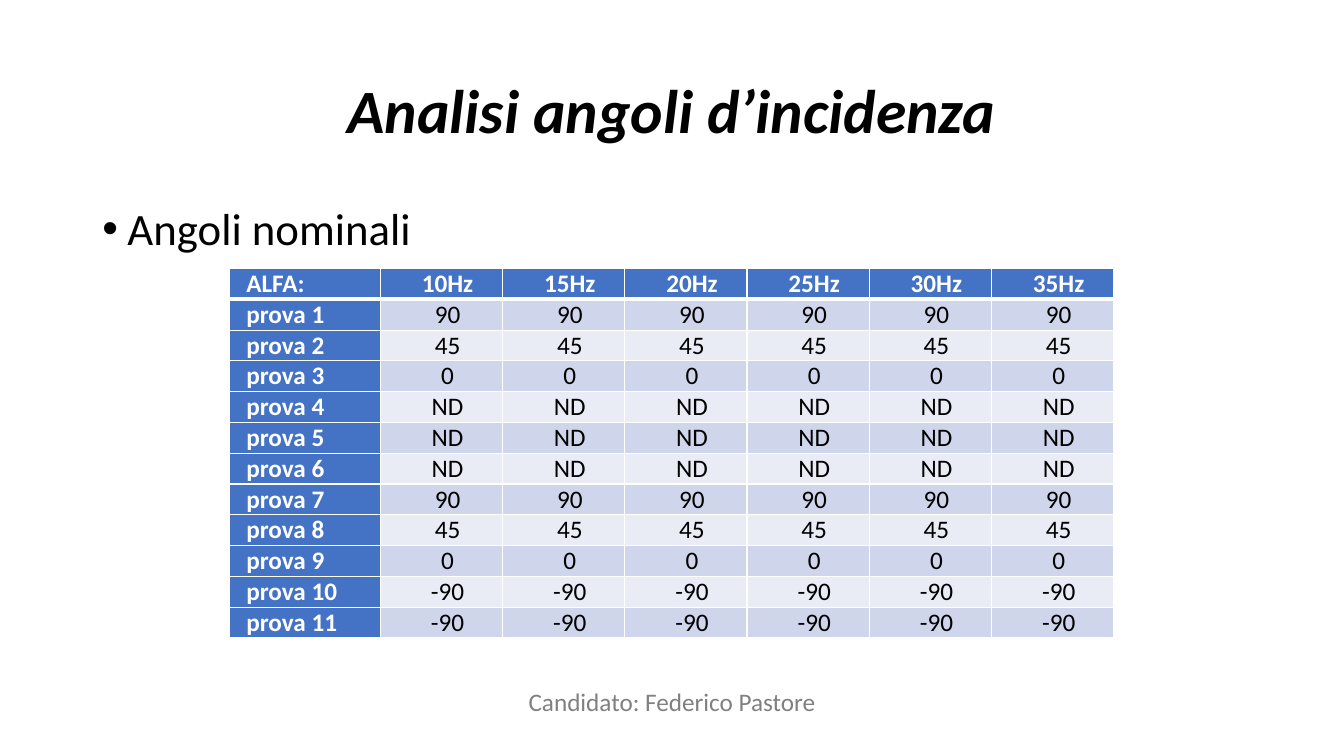
import dataclasses

import lxml.etree
import pptx
import pptx.dml.color
import pptx.enum.text
import pptx.oxml.ns
import pptx.util

Pt = pptx.util.Pt
Align = pptx.enum.text.PP_ALIGN
Anchor = pptx.enum.text.MSO_ANCHOR
qn = pptx.oxml.ns.qn


@dataclasses.dataclass(frozen=True)
class Theme:
    """Colours, font and type sizes of the slide."""
    face: str = "Calibri"
    ink: str = "000000"
    paper: str = "FFFFFF"
    mute: str = "808080"
    head: str = "4472C4"
    bands: tuple = ("CFD5EA", "E9EBF5")
    title: int = 44
    body: int = 32
    small: int = 18


THEME = Theme()
HEADS = ["ALFA:"] + [f"{hertz}Hz" for hertz in range(10, 40, 5)]
ANGLES = ["90", "45", "0", "ND", "ND", "ND", "90", "45", "0", "-90", "-90"]


def style(para, size, color, bold=False, italic=False):
    """Format every run of a paragraph."""
    for run in para.runs:
        font = run.font
        font.name, font.size = THEME.face, Pt(size)
        font.bold, font.italic = bold, italic
        font.color.rgb = pptx.dml.color.RGBColor.from_string(color)


def place(shape, box):
    """Move a shape to a box given in points."""
    shape.left, shape.top, shape.width, shape.height = map(Pt, box)


def add_title(slide, box, text):
    """Fill the title placeholder."""
    title = slide.shapes.title
    place(title, box)
    frame = title.text_frame
    frame.text = text
    frame.vertical_anchor = Anchor.MIDDLE
    para = frame.paragraphs[0]
    para.alignment, para.line_spacing = Align.CENTER, 0.9
    style(para, THEME.title, THEME.ink, bold=True, italic=True)


def add_foot(slide, box, text):
    """Add the centred candidate line."""
    frame = slide.shapes.add_textbox(*map(Pt, box)).text_frame
    frame.text = text
    frame.word_wrap = False
    para = frame.paragraphs[0]
    para.alignment = Align.CENTER
    style(para, THEME.small, THEME.mute)


def add_body(slide, box, text):
    """Add the bulleted body text."""
    frame = slide.shapes.add_textbox(*map(Pt, box)).text_frame
    frame.word_wrap = True
    frame.text = text
    para = frame.paragraphs[0]
    para.line_spacing = 0.9
    props = para._p.get_or_add_pPr()
    props.set("marL", str(Pt(18)))
    props.set("indent", str(Pt(-18)))
    lxml.etree.SubElement(props, qn("a:buFont"), typeface="Arial")
    lxml.etree.SubElement(props, qn("a:buChar"), char="•")
    style(para, THEME.body, THEME.ink)


def add_edges(cell, top, base):
    """Draw the four cell borders, with top and base widths in points."""
    props = cell._tc.get_or_add_tcPr()
    for side, width in (("L", 1), ("R", 1), ("T", top), ("B", base)):
        line = lxml.etree.SubElement(props, qn(f"a:ln{side}"), w=str(Pt(width)))
        fill = lxml.etree.SubElement(line, qn("a:solidFill"))
        lxml.etree.SubElement(fill, qn("a:srgbClr"), val=THEME.paper)


def fill_cell(cell, text, row, col):
    """Write and format one cell by its place in the grid."""
    label = row == 0 or col == 0
    back = THEME.head if label else THEME.bands[(row - 1) % 2]
    add_edges(cell, 3 if row == 1 else 1, 3 if row == 0 else 1)
    cell.fill.solid()
    cell.fill.fore_color.rgb = pptx.dml.color.RGBColor.from_string(back)
    cell.margin_left = cell.margin_right = Pt(3.6)
    cell.margin_top = cell.margin_bottom = Pt(0)
    cell.vertical_anchor = Anchor.BOTTOM
    cell.text_frame.text = text
    para = cell.text_frame.paragraphs[0]
    para.alignment = Align.CENTER if col else Align.LEFT
    para._p.get_or_add_pPr().set("indent", str(Pt(8.64)))
    style(para, THEME.small, THEME.paper if label else THEME.ink, bold=label)


def add_grid(slide, box, first):
    """Add the angle table, its first column of the given width."""
    rows = [HEADS] + [[f"prova {num}"] + [angle] * (len(HEADS) - 1)
                      for num, angle in enumerate(ANGLES, 1)]
    table = slide.shapes.add_table(len(rows), len(HEADS), *map(Pt, box)).table
    rest = (box[2] - first) / (len(HEADS) - 1)
    for col, column in enumerate(table.columns):
        column.width = Pt(rest if col else first)
    for row, texts in enumerate(rows):
        table.rows[row].height = Pt(box[3] / len(rows))
        for col, text in enumerate(texts):
            fill_cell(table.cell(row, col), text, row, col)


def main():
    """Build and save the slide."""
    deck = pptx.Presentation()
    deck.slide_width, deck.slide_height = Pt(960), Pt(540)
    slide = deck.slides.add_slide(deck.slide_layouts[5])
    add_title(slide, (66, 28.8, 828, 104.4), "Analisi angoli d’incidenza")
    add_foot(slide, (367, 486.7, 226, 29), "Candidato: Federico Pastore")
    add_body(slide, (66, 144, 828, 342.7), "Angoli nominali")
    add_grid(slide, (163.7, 191.8, 632, 264), 108)
    deck.save("out.pptx")


if __name__ == "__main__":
    main()
